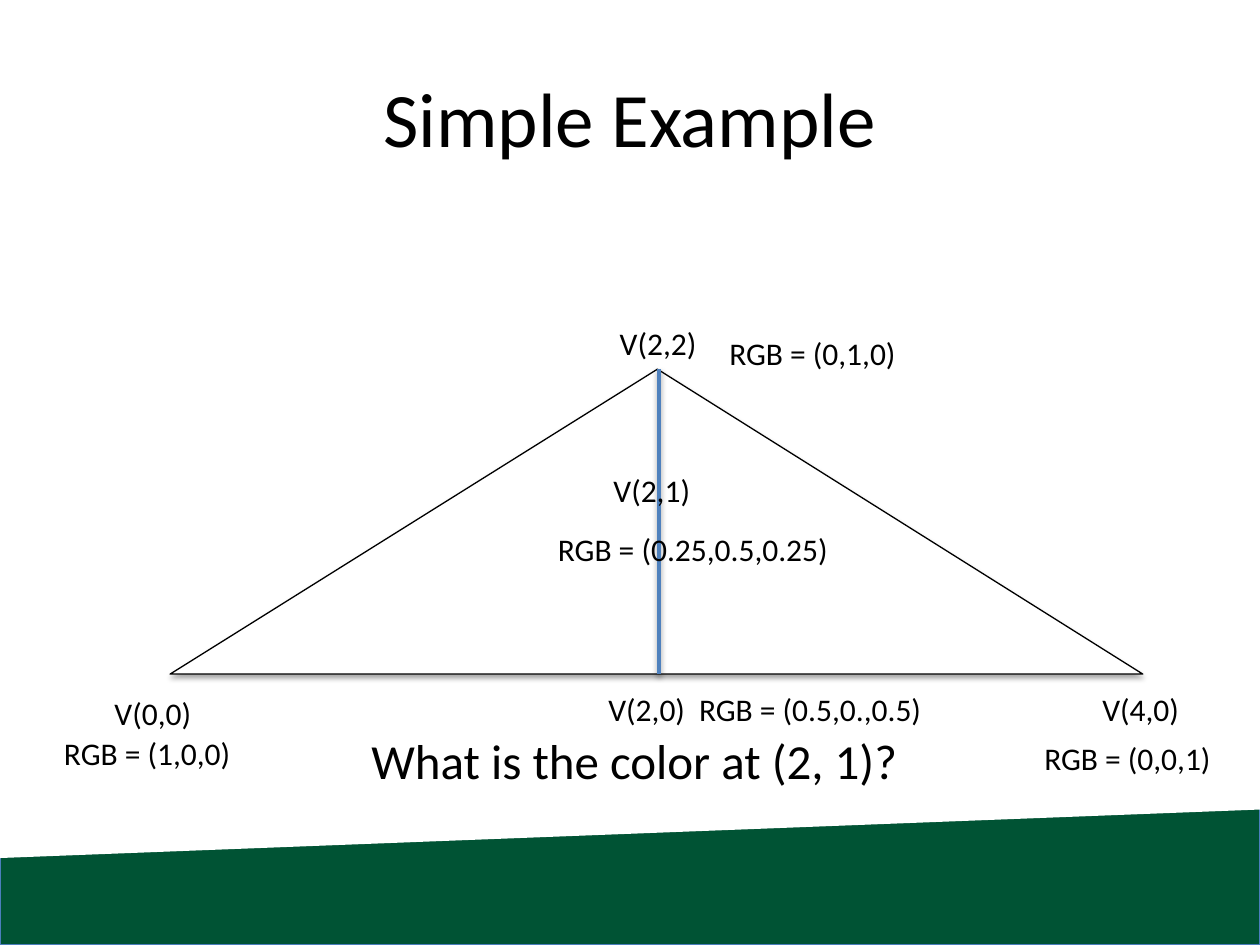
import pptx
import pptx.dml.color
import pptx.enum.shapes
import pptx.enum.text
import pptx.oxml
import pptx.oxml.ns
import pptx.util

Inches = pptx.util.Inches
RGBColor = pptx.dml.color.RGBColor
SHAPE = pptx.enum.shapes.MSO_SHAPE

BLACK = RGBColor(0x00, 0x00, 0x00)
WHITE = RGBColor(0xFF, 0xFF, 0xFF)
GREEN = RGBColor(0x00, 0x53, 0x34)
BAND_EDGE = RGBColor(0x4B, 0x7E, 0xBC)
BLUE = RGBColor(0x4F, 0x81, 0xBD)


class SlideBuilder:
    """Holds the text style and the current slide, and adds its elements."""

    font_name = "Calibri"
    color = BLACK

    def __init__(self, slide):
        self.slide = slide

    def format_text(self, frame, text, size):
        frame.text = text
        font = frame.paragraphs[0].runs[0].font
        font.name = self.font_name
        font.size = pptx.util.Pt(size)
        font.color.rgb = self.color

    def title(self, text, left, top, width, height):
        heading = self.slide.shapes.title
        heading.left, heading.top = Inches(left), Inches(top)
        heading.width, heading.height = Inches(width), Inches(height)
        self.format_text(heading.text_frame, text, 44)
        heading.text_frame.vertical_anchor = pptx.enum.text.MSO_ANCHOR.MIDDLE
        heading.text_frame.paragraphs[0].alignment = pptx.enum.text.PP_ALIGN.CENTER

    def shape(self, kind, left, top, width, height, fill, line=None):
        shape = self.slide.shapes.add_shape(
            kind, Inches(left), Inches(top), Inches(width), Inches(height))
        shape.shadow.inherit = False
        shape.fill.solid()
        shape.fill.fore_color.rgb = fill
        if line is None:
            shape.line.fill.background()
        else:
            shape.line.color.rgb = line
            shape.line.width = pptx.util.Pt(0.75)
        return shape

    def line(self, x1, y1, x2, y2, color, width):
        line = self.slide.shapes.add_connector(
            pptx.enum.shapes.MSO_CONNECTOR.STRAIGHT,
            Inches(x1), Inches(y1), Inches(x2), Inches(y2))
        line.line.color.rgb = color
        line.line.width = pptx.util.Pt(width)
        return line

    def shadow(self, element, distance, opacity):
        properties = element._element.spPr
        for effects in properties.findall(pptx.oxml.ns.qn("a:effectLst")):
            properties.remove(effects)
        properties.append(pptx.oxml.parse_xml(
            f'<a:effectLst {pptx.oxml.ns.nsdecls("a")}>'
            f'<a:outerShdw blurRad="{pptx.util.Pt(3.1)}" dist="{pptx.util.Pt(distance)}" '
            'dir="5400000" rotWithShape="0"><a:srgbClr val="000000">'
            f'<a:alpha val="{opacity * 1000}"/></a:srgbClr></a:outerShdw></a:effectLst>'))

    def label(self, text, left, top, width, height=0.4, size=18):
        box = self.slide.shapes.add_textbox(
            Inches(left), Inches(top), Inches(width), Inches(height))
        self.format_text(box.text_frame, text, size)
        box.text_frame.word_wrap = False
        box.text_frame.auto_size = pptx.enum.text.MSO_AUTO_SIZE.SHAPE_TO_FIT_TEXT


def main():
    deck = pptx.Presentation()
    deck.slide_width, deck.slide_height = Inches(10), Inches(7.5)
    builder = SlideBuilder(deck.slides.add_slide(deck.slide_layouts[5]))
    builder.title("Simple Example", 0.5, 0.3, 9, 1.25)

    band = builder.shape(SHAPE.RECTANGLE, 0, 5.61, 10, 1.89, GREEN, BAND_EDGE)
    builder.shadow(band, 1.8, 35)
    slope = builder.shape(SHAPE.PARALLELOGRAM, 3.84, 0.65, 2.32, 10, WHITE)
    slope.adjustments[0] = 0.166
    slope.rotation = 90
    slope._element.spPr.xfrm.set("flipH", "1")

    triangle = builder.shape(
        SHAPE.ISOSCELES_TRIANGLE, 1.35, 2.93, 7.72, 2.42, WHITE, BLACK)
    triangle.adjustments[0] = 0.501
    builder.shadow(triangle, 1.8, 35)

    for vertex, left, top in (
            ("V(0,0)", 0.81, 5.46), ("V(4,0)", 8.65, 5.43), ("V(2,2)", 4.82, 2.52)):
        builder.label(vertex, left, top, 0.82)
    builder.label("What is the color at (2, 1)?", 2.85, 5.75, 4.43, 0.57, 28)
    for vertex_color, left, top in (
            ("RGB = (1,0,0)", 0.41, 5.78), ("RGB = (0,1,0)", 5.69, 2.6),
            ("RGB = (0,0,1)", 8.19, 5.82)):
        builder.label(vertex_color, left, top, 1.54)

    median = builder.line(5.23, 2.93, 5.23, 5.35, BLUE, 2)
    builder.shadow(median, 1.6, 38)
    for midpoint, left, top, width in (
            ("V(2,0)", 4.73, 5.43, 0.82), ("RGB = (0.5,0.,0.5)", 5.45, 5.43, 1.98),
            ("V(2,1)", 4.77, 3.69, 0.82), ("RGB = (0.25,0.5,0.25)", 4.33, 4.16, 2.37)):
        builder.label(midpoint, left, top, width)

    deck.save("out.pptx")


if __name__ == "__main__":
    main()
